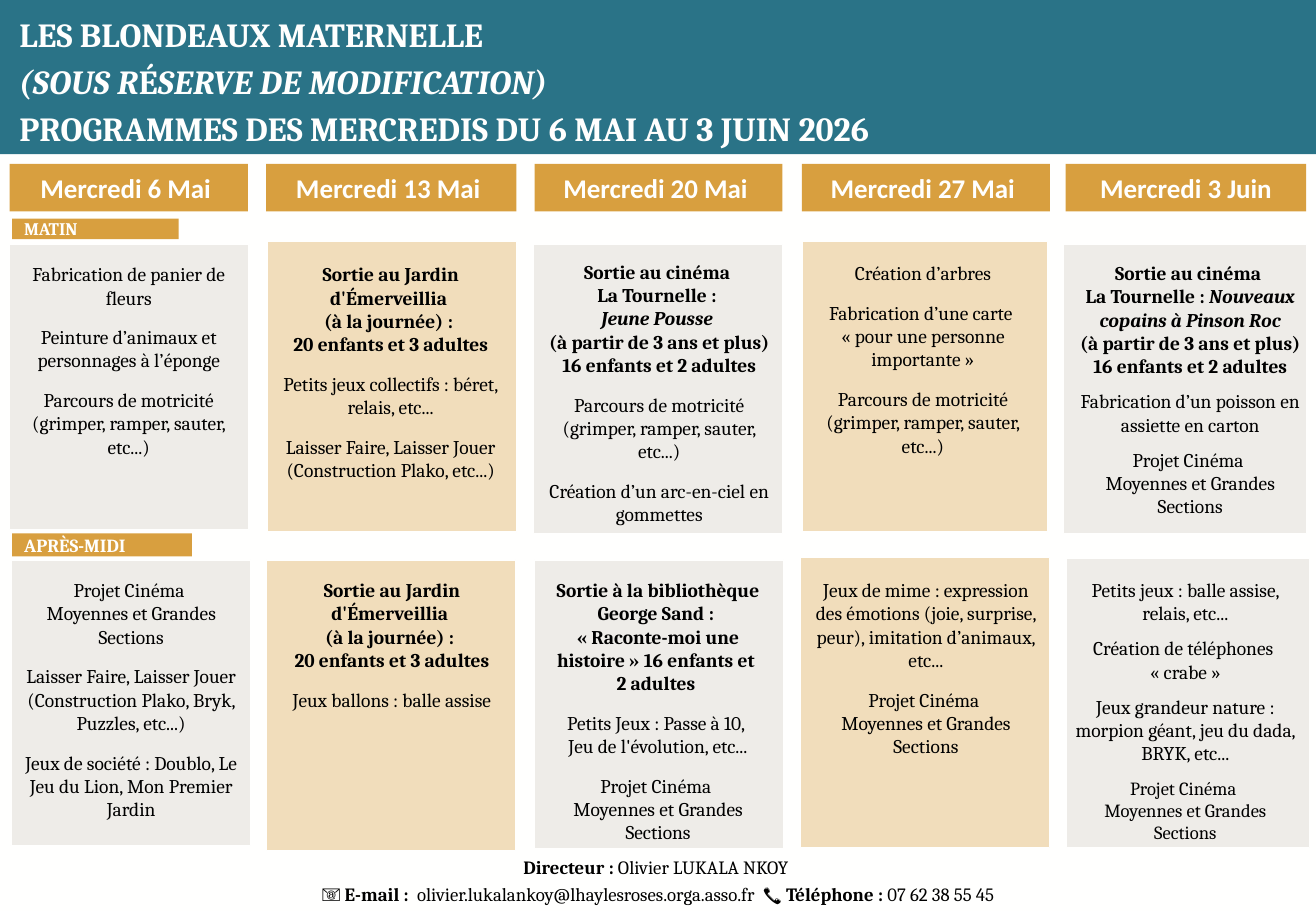
from dataclasses import dataclass

from lxml import etree
from pptx import Presentation
from pptx import util as u
from pptx.dml import color
from pptx.enum import shapes, text
from pptx.oxml import ns

PX = 9144
WHITE = color.RGBColor(0xFF, 0xFF, 0xFE)
BLACK = color.RGBColor(0, 0, 0)
TEAL = color.RGBColor(0x2A, 0x73, 0x87)
GOLD = color.RGBColor(0xD8, 0x9F, 0x3F)
GREY = color.RGBColor(0xEE, 0xEC, 0xE8)
SERIF, SANS = "Cambria", "Calibri"


@dataclass
class Block:
    """A group of lines in an activity card, with the gap above it in points."""
    lines: list
    bold: bool = False
    gap: float = 9.7
    size: float = 11.5


@dataclass
class Card:
    """An activity card: its panel, its text area and its blocks."""
    panel: tuple
    area: tuple
    blocks: list
    gold: bool = False


OUTING = Block(["Sortie au Jardin d'Émerveillia ", "(à la journée) : ",
                "20 enfants et 3 adultes"], bold=True)
MOTOR = Block(["Parcours de motricité (grimper, ramper, sauter, etc...)"])
CINEMA_LINES = ["Projet Cinéma ", "Moyennes et Grandes Sections"]
CINEMA = Block(CINEMA_LINES)
FILM_AGES = "(à partir de 3 ans et plus) 16 enfants et 2 adultes"

DAYS = [
    ("Mercredi 6 Mai ", 8, 196),
    ("Mercredi 13 Mai ", 219, 206),
    ("Mercredi 20 Mai ", 440, 204),
    ("Mercredi 27 Mai ", 660, 204),
    ("Mercredi 3 Juin", 877, 198),
]

MORNING = [
    Card((8, 201, 197, 235), (8, 201, 196, 235), [
        Block(["Fabrication de panier de fleurs"]),
        Block(["Peinture d’animaux et personnages à l’éponge"]),
        MOTOR]),
    Card((220, 199, 205, 239), (219, 201, 205, 238), [
        OUTING,
        Block(["Petits jeux collectifs : béret, relais, etc..."]),
        Block(["Laisser Faire, Laisser Jouer (Construction Plako, etc...)"])], gold=True),
    Card((439, 201, 205, 238), (440, 199, 205, 239), [
        Block(["Sortie au cinéma ", "La Tournelle : ", "*Jeune Pousse *", FILM_AGES], bold=True),
        MOTOR,
        Block(["Création d’un arc-en-ciel en gommettes"])]),
    Card((660, 199, 202, 239), (659, 200, 201, 238), [
        Block(["Création d’arbres"]),
        Block(["Fabrication d’une carte ", "« pour une personne importante »"]),
        MOTOR], gold=True),
    Card((875, 201, 200, 238), (877, 200, 205, 257), [
        Block(["Sortie au cinéma ", "La Tournelle : *Nouveaux copains à Pinson Roc*", FILM_AGES],
              bold=True),
        Block(["Fabrication d’un poisson en assiette en carton"], gap=7),
        Block(CINEMA_LINES, gap=7)]),
]

AFTERNOON = [
    Card((9, 461, 197, 235), (10, 461, 196, 235), [
        CINEMA,
        Block(["Laisser Faire, Laisser Jouer (Construction Plako, Bryk, Puzzles, etc...)"]),
        Block(["Jeux de société : Doublo, Le Jeu du Lion, Mon Premier Jardin"])]),
    Card((219, 461, 205, 239), (220, 461, 205, 238), [
        OUTING, Block(["Jeux ballons : balle assise"])], gold=True),
    Card((440, 461, 205, 238), (439, 461, 205, 239), [
        Block(["Sortie à la bibliothèque George Sand : ",
               "« Raconte-moi une histoire » 16 enfants et ", "2 adultes "], bold=True),
        Block(["Petits Jeux : Passe à 10, ", "Jeu de l'évolution, etc..."]),
        CINEMA]),
    Card((659, 459, 205, 239), (661, 461, 202, 237), [
        Block(["Jeux de mime : expression des émotions (joie, surprise, peur), "
               "imitation d’animaux, etc..."]),
        CINEMA], gold=True),
    Card((878, 460, 200, 238), (873, 461, 205, 239), [
        Block(["Petits jeux : balle assise, relais, etc..."]),
        Block(["Création de téléphones ", "« crabe »"], gap=7),
        Block(["Jeux grandeur nature : morpion géant, jeu du dada, BRYK, etc..."], gap=7),
        Block(CINEMA_LINES, gap=7, size=11)]),
]


def scaled(box):
    """Turn a box in px into EMU."""
    return [u.Emu(value * PX) for value in box]


def add_panel(page, box, fill, line=None, opacity=None):
    """Add a flat rectangle."""
    panel = page.shapes.add_shape(shapes.MSO_SHAPE.RECTANGLE, *scaled(box))
    panel.shadow.inherit = False
    panel.fill.solid()
    panel.fill.fore_color.rgb = fill
    if opacity:
        tint = panel.fill._xPr.find(".//" + ns.qn("a:srgbClr"))
        etree.SubElement(tint, ns.qn("a:alpha")).set("val", str(opacity * 1000))
    if line:
        panel.line.color.rgb = line
        panel.line.width = u.Pt(0.75)
    else:
        panel.line.fill.background()
    return panel


def set_frame(shape, insets=(10, 5, 10, 5), anchor=text.MSO_ANCHOR.TOP):
    """Set wrapping, insets in px and anchor of a shape's text frame."""
    frame = shape.text_frame
    frame.word_wrap = True
    frame.vertical_anchor = anchor
    (frame.margin_left, frame.margin_top,
     frame.margin_right, frame.margin_bottom) = scaled(insets)
    return frame


def write(frame, content, size, font=SERIF, ink=BLACK, bold=False, before=0,
          align=text.PP_ALIGN.CENTER, starred="italic"):
    """Write one paragraph, giving the parts between stars the starred format."""
    first = not frame.paragraphs[0].runs
    para = frame.paragraphs[0] if first else frame.add_paragraph()
    para.alignment = align
    para.space_before = u.Pt(0 if first else before)
    for index, part in enumerate(content.split("*")):
        if not part:
            continue
        span = para.add_run()
        span.text = part
        span.font.name = font
        span.font.size = u.Pt(size)
        span.font.color.rgb = ink
        span.font.bold = bold or (starred == "bold" and index % 2 == 1)
        span.font.italic = starred == "italic" and index % 2 == 1


def add_title(page, box):
    """Add the title banner."""
    frame = set_frame(add_panel(page, box, TEAL), (16, 8, 10, 2), text.MSO_ANCHOR.MIDDLE)
    for line in ("LES BLONDEAUX MATERNELLE",
                 "*(SOUS R*É*SERVE DE MODIFICATION)*",
                 "PROGRAMMES DES MERCREDIS DU 6 MAI AU 3 JUIN 2026"):
        write(frame, line, 20, ink=WHITE, bold=True, before=4, align=text.PP_ALIGN.LEFT)


def add_day(page, box, name):
    """Add the heading of one day."""
    frame = set_frame(add_panel(page, box, GOLD), anchor=text.MSO_ANCHOR.MIDDLE)
    write(frame, name, 16, font=SANS, ink=WHITE, bold=True)


def add_session(page, box, name, size, cards):
    """Add the label of a half-day and its activity cards."""
    for card in cards:
        add_card(page, card)
    frame = set_frame(add_panel(page, box, GOLD), (10, 0, 10, 0), text.MSO_ANCHOR.MIDDLE)
    write(frame, name, size, ink=WHITE, bold=True, align=text.PP_ALIGN.LEFT)


def add_card(page, card):
    """Add one activity card with its text."""
    if card.gold:
        add_panel(page, card.panel, GOLD, WHITE, opacity=35)
    else:
        add_panel(page, card.panel, GREY, WHITE)
    frame = set_frame(page.shapes.add_textbox(*scaled(card.area)), (10, 15, 10, 5))
    for block in card.blocks:
        for index, line in enumerate(block.lines):
            write(frame, line, block.size, bold=block.bold, before=0 if index else block.gap)


def add_contact(page, box):
    """Add the contact lines."""
    frame = set_frame(page.shapes.add_textbox(*scaled(box)))
    for line in ("*Directeur :* Olivier LUKALA NKOY ",
                 "*📧 E-mail :  *olivier.lukalankoy@lhaylesroses.orga.asso.fr"
                 "*  📞 Téléphone : *07 62 38 55 45"):
        write(frame, line, 11.1, before=2.2, starred="bold")


def main():
    """Build the programme and save it."""
    deck = Presentation()
    deck.slide_width, deck.slide_height = scaled((1083, 750))
    page = deck.slides.add_slide(deck.slide_layouts[6])
    page.background.fill.solid()
    page.background.fill.fore_color.rgb = WHITE
    add_title(page, (0, 0, 1083, 127))
    for name, left, width in DAYS:
        add_day(page, (left, 135, width, 39), name)
    add_session(page, (10, 180, 137, 17), "MATIN", 10.5, MORNING)
    add_session(page, (10, 439, 148, 19), "APRÈS-MIDI", 11, AFTERNOON)
    add_contact(page, (0, 700, 1083, 50))
    deck.save("out.pptx")


if __name__ == "__main__":
    main()
